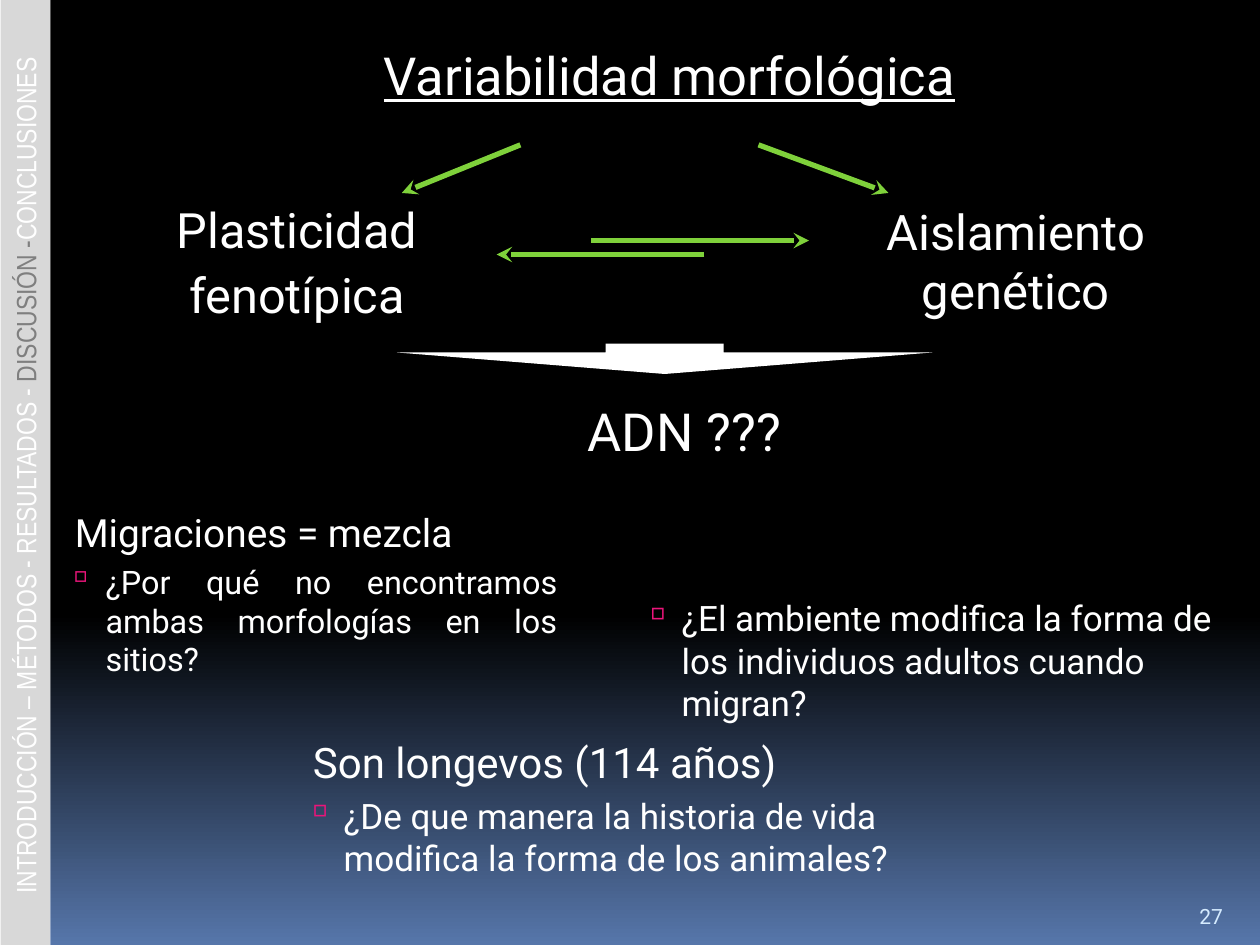
"""Build the slide on morphological variability and its open questions."""
import copy
import dataclasses
import typing

import lxml.etree
import pptx
import pptx.dml.color
import pptx.enum.shapes
import pptx.enum.text
import pptx.oxml.ns
import pptx.util

Cm = pptx.util.Cm
RGBColor = pptx.dml.color.RGBColor
Align = pptx.enum.text.PP_ALIGN
Anchor = pptx.enum.text.MSO_ANCHOR
Shape = pptx.enum.shapes.MSO_SHAPE
qn = pptx.oxml.ns.qn

WHITE = RGBColor(0xFF, 0xFF, 0xFF)
BLACK = RGBColor(0x00, 0x00, 0x00)
BLUE = RGBColor(0x56, 0x76, 0xAA)
GREEN = RGBColor(0x7F, 0xD1, 0x3B)
PINK = RGBColor(0xEA, 0x15, 0x7A)
SILVER = RGBColor(0xD8, 0xD8, 0xD8)
GREY = RGBColor(0x7F, 0x7F, 0x7F)
PALE_BLUE = RGBColor(0xD6, 0xEC, 0xFF)


@dataclasses.dataclass(frozen=True)
class Line:
    text: str
    size: float
    align: Align = Align.LEFT
    margin: float = 1.14
    indent: float = -0.97
    before: float = 0
    spacing: float = 1.0
    color: RGBColor = WHITE
    underline: bool = False
    bullet: bool = False


@dataclasses.dataclass(frozen=True)
class Block:
    left: float
    top: float
    width: float
    height: float
    lines: tuple[Line, ...]
    anchor: Anchor = Anchor.TOP


@dataclasses.dataclass(frozen=True)
class Arrow:
    start: tuple[float, float]
    end: tuple[float, float]


def question(text: str, size: float, **options: typing.Any) -> Line:
    return Line(text, size, margin=0.79, indent=-0.79, bullet=True, **options)


TITLE = Block(2.62, 0.74, 21.59, 1.8, (
    Line("Variabilidad morfológica", 30, Align.CENTER, underline=True),))
BLOCKS = (
    Block(2.11, 4.04, 7.59, 2.79, (
        Line("Plasticidad", 27.8, Align.CENTER, spacing=0.9),
        Line("fenotípica", 27.8, Align.CENTER, before=7, spacing=0.9))),
    Block(15.7, 3.94, 8.41, 2.79, (
        Line("Aislamiento genético", 28, Align.CENTER, indent=0),)),
    Block(2.92, 7.92, 21.59, 1.8, (Line("ADN ???", 30, Align.CENTER),)),
    Block(23.93, 17.83, 1.27, 1.02, (
        Line("27", 12, margin=0, indent=0, color=PALE_BLUE),), Anchor.BOTTOM),
    Block(1.09, 10.13, 10.39, 3.61, (
        Line("Migraciones = mezcla", 22.2),
        question("¿Por qué no encontramos ambas morfologías en los sitios?",
                 18.5, align=Align.JUSTIFY, before=3.7))),
    Block(5.89, 14.73, 13.59, 4.39, (
        Line("Son longevos (114 años)", 24),
        question("¿De que manera la historia de vida modifica la forma de los animales?",
                 20, before=4))),
    Block(12.7, 11.91, 12.7, 1.96, (
        question("¿El ambiente modifica la forma de los individuos adultos cuando migran?", 20),)),
)
ARROWS = (
    Arrow((10.49, 2.92), (8.1, 3.89)),
    Arrow((15.29, 2.92), (17.91, 3.89)),
    Arrow((14.2, 5.13), (10.01, 5.13)),
    Arrow((11.91, 4.85), (16.31, 4.85)),
)
SECTIONS = (
    ("INTRODUCCIÓN – MÉTODOS - RESULTADOS - ", WHITE),
    ("DISCUSIÓN -", GREY),
    ("CONCLUSIONES", WHITE),
)


def add_span(para, text: str, *, size: float, color: RGBColor,
             font: str = "Roboto", underline: bool = False) -> None:
    span = para.add_run()
    span.text = text
    span.font.size = pptx.util.Pt(size)
    span.font.name = font
    span.font.color.rgb = color
    span.font.underline = underline


def add_bullet(properties) -> None:
    color = lxml.etree.SubElement(properties, qn("a:buClr"))
    lxml.etree.SubElement(color, qn("a:srgbClr"), val=str(PINK))
    lxml.etree.SubElement(properties, qn("a:buChar"), char="▫")


def fill_box(box, block: Block) -> None:
    box.left, box.top = Cm(block.left), Cm(block.top)
    box.width, box.height = Cm(block.width), Cm(block.height)
    frame = box.text_frame
    frame.word_wrap = True
    frame.auto_size = pptx.enum.text.MSO_AUTO_SIZE.NONE
    frame.vertical_anchor = block.anchor
    for index, line in enumerate(block.lines):
        para = frame.add_paragraph() if index else frame.paragraphs[0]
        para.alignment = line.align
        para.line_spacing = line.spacing
        para.space_before = pptx.util.Pt(line.before)
        properties = para._p.get_or_add_pPr()
        properties.set("marL", str(Cm(line.margin)))
        properties.set("indent", str(Cm(line.indent)))
        if line.bullet:
            add_bullet(properties)
        add_span(para, line.text, size=line.size, color=line.color, underline=line.underline)


def add_filled_shape(page, kind: Shape, left: float, top: float,
                     width: float, height: float, color: RGBColor):
    shape = page.shapes.add_shape(kind, Cm(left), Cm(top), Cm(width), Cm(height))
    shape.shadow.inherit = False
    shape.fill.solid()
    shape.fill.fore_color.rgb = color
    shape.line.fill.background()
    return shape


def add_arrow(page, arrow: Arrow) -> None:
    connector = page.shapes.add_connector(
        pptx.enum.shapes.MSO_CONNECTOR.STRAIGHT, *map(Cm, arrow.start + arrow.end))
    connector.line.color.rgb = GREEN
    connector.line.width = pptx.util.Pt(3)
    lxml.etree.SubElement(connector.line._get_or_add_ln(), qn("a:tailEnd"), type="stealth")
    lxml.etree.SubElement(connector._element.spPr, qn("a:effectLst"))


def paint_background(page) -> None:
    fill = page.background.fill
    fill.gradient()
    fill.gradient_angle = 270
    first_stop = page.element.xpath(".//p:bg//a:gs")[0]
    first_stop.addnext(copy.deepcopy(first_stop))
    for stop, position, color in zip(fill.gradient_stops, (0, 0.65, 1), (BLACK, BLACK, BLUE)):
        stop.position = position
        stop.color.rgb = color


def add_sidebar(page) -> None:
    add_filled_shape(page, Shape.RECTANGLE, 0, 0, 1.02, 19.05, WHITE)
    sidebar = add_filled_shape(page, Shape.RECTANGLE, -9.09, 9.09, 19.2, 0.99, SILVER)
    sidebar.rotation = 270
    sidebar.text_frame.vertical_anchor = Anchor.MIDDLE
    para = sidebar.text_frame.paragraphs[0]
    para.alignment = Align.CENTER
    for text, color in SECTIONS:
        add_span(para, text, size=16, color=color, font="Arial Narrow")


def main() -> None:
    deck = pptx.Presentation()
    deck.slide_width, deck.slide_height = Cm(25.4), Cm(19.05)
    page = deck.slides.add_slide(deck.slide_layouts[5])
    paint_background(page)
    fill_box(page.shapes.title, TITLE)
    add_sidebar(page)
    for arrow in ARROWS:
        add_arrow(page, arrow)
    pointer = add_filled_shape(page, Shape.DOWN_ARROW, 8, 6.93, 10.8, 0.61, WHITE)
    pointer.adjustments[0] = 0.22
    pointer.adjustments[1] = 0.71
    for block in BLOCKS:
        fill_box(page.shapes.add_textbox(0, 0, 0, 0), block)
    deck.save("out.pptx")


if __name__ == "__main__":
    main()
